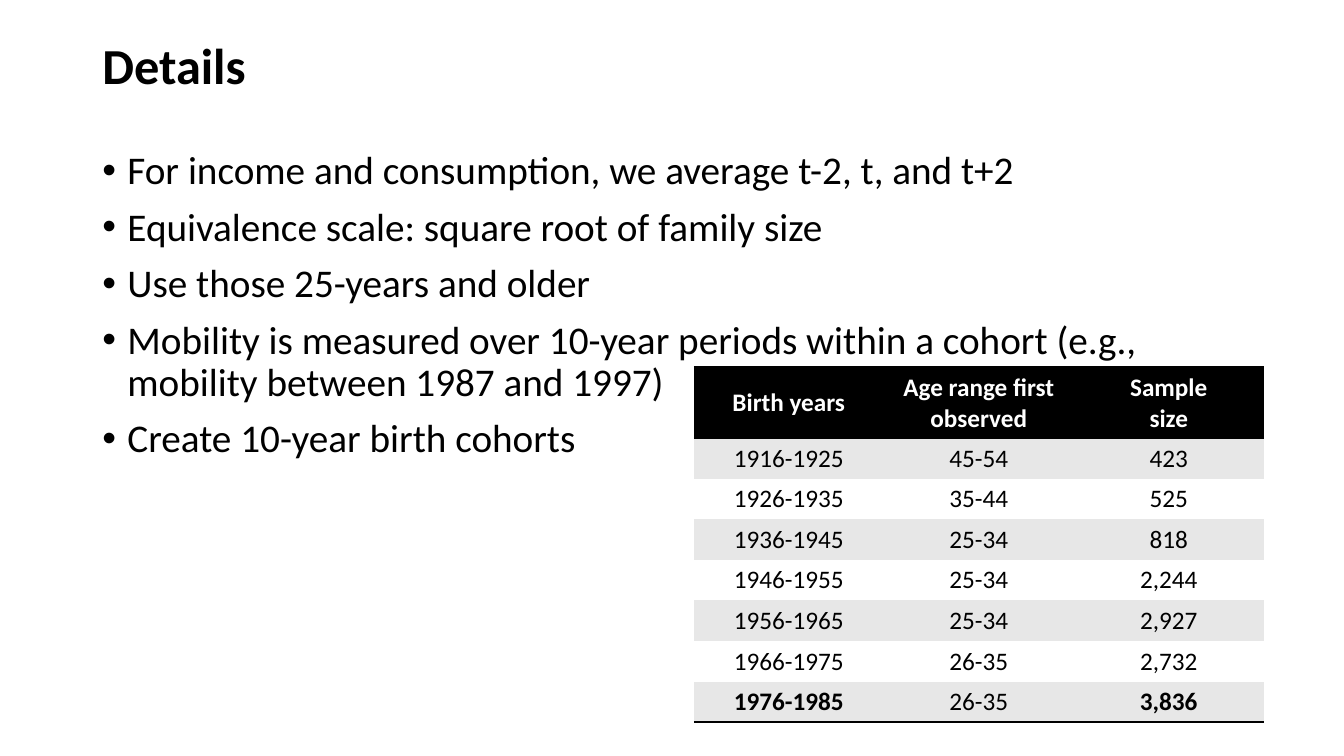
import pptx
import pptx.util
import pptx.dml.color
import pptx.enum.text
import pptx.oxml
import pptx.oxml.ns

Pt = pptx.util.Pt
MIDDLE = pptx.enum.text.MSO_ANCHOR.MIDDLE
CENTER = pptx.enum.text.PP_ALIGN.CENTER


def color(hex_code):
    return pptx.dml.color.RGBColor.from_string(hex_code)


def style(p, size, hex_code, bold=False):
    p.font.name = "Calibri"
    p.font.size = Pt(size)
    p.font.bold = bold
    p.font.color.rgb = color(hex_code)


prs = pptx.Presentation()
prs.slide_width, prs.slide_height = Pt(960), Pt(540)
s = prs.slides.add_slide(prs.slide_layouts[6])

# Title
tf = s.shapes.add_textbox(Pt(66), Pt(28.75), Pt(828), Pt(40)).text_frame
tf.word_wrap = True
tf.vertical_anchor = MIDDLE
p = tf.paragraphs[0]
p.text = "Details"
p.line_spacing = 0.9
style(p, 36, "000000", True)

# Bullet list
bullets = [
    "For income and consumption, we average t-2, t, and t+2",
    "Equivalence scale: square root of family size",
    "Use those 25-years and older",
    "Mobility is measured over 10-year periods within a cohort (e.g., "
    "mobility between 1987 and 1997)",
    "Create 10-year birth cohorts",
]
tf = s.shapes.add_textbox(Pt(66), Pt(104.4), Pt(828), Pt(381.6)).text_frame
tf.word_wrap = True
tf.text = "\n".join(bullets)
for p in tf.paragraphs:
    p.line_spacing = 0.9
    p.space_before = Pt(10)
    style(p, 28, "000000")
    pPr = p._p.get_or_add_pPr()
    pPr.set("marL", str(Pt(18)))
    pPr.set("indent", str(-Pt(18)))
    for tag, name, value in (("buFont", "typeface", "Arial"), ("buChar", "char", "•")):
        bullet = pptx.oxml.parse_xml(
            f'<a:{tag} {pptx.oxml.ns.nsdecls("a")} {name}="{value}"/>')
        pPr.insert_element_before(bullet, "a:tabLst", "a:defRPr", "a:extLst")

# Cohort table
rows = [
    ("Birth years", "Age range first observed", "Sample\nsize"),
    ("1916-1925", "45-54", "423"),
    ("1926-1935", "35-44", "525"),
    ("1936-1945", "25-34", "818"),
    ("1946-1955", "25-34", "2,244"),
    ("1956-1965", "25-34", "2,927"),
    ("1966-1975", "26-35", "2,732"),
    ("1976-1985", "26-35", "3,836"),
]
last = len(rows) - 1
table = s.shapes.add_table(len(rows), 3, Pt(495.6), Pt(262.5), Pt(407.1), Pt(252)).table
table.first_row = table.horz_banding = False
# Plain style without grid lines
table._tbl.tblPr.find(pptx.oxml.ns.qn("a:tableStyleId")).text = (
    "{2D5ABB26-0587-4C30-8999-92F81FD0307C}")
for column in table.columns:
    column.width = Pt(135.7)

for i, row in enumerate(rows):
    header = i == 0
    table.rows[i].height = Pt(49 if header else 29)
    fill = "000000" if header else "E7E7E7" if i % 2 else "FFFFFF"
    edges = ("lnT", "lnB") if header else ("lnB",) if i == last else ()
    for j, text in enumerate(row):
        cell = table.cell(i, j)
        cell.text = text
        cell.vertical_anchor = MIDDLE
        cell.fill.solid()
        cell.fill.fore_color.rgb = color(fill)
        for p in cell.text_frame.paragraphs:
            p.alignment = CENTER
            style(p, 18, "FFFFFF" if header else "000000",
                  header or (i == last and j != 1))
        for k, edge in enumerate(edges):
            cell._tc.get_or_add_tcPr().insert(k, pptx.oxml.parse_xml(
                f'<a:{edge} {pptx.oxml.ns.nsdecls("a")} w="{Pt(2)}">'
                f'<a:solidFill><a:srgbClr val="000000"/></a:solidFill></a:{edge}>'))

prs.save("out.pptx")
